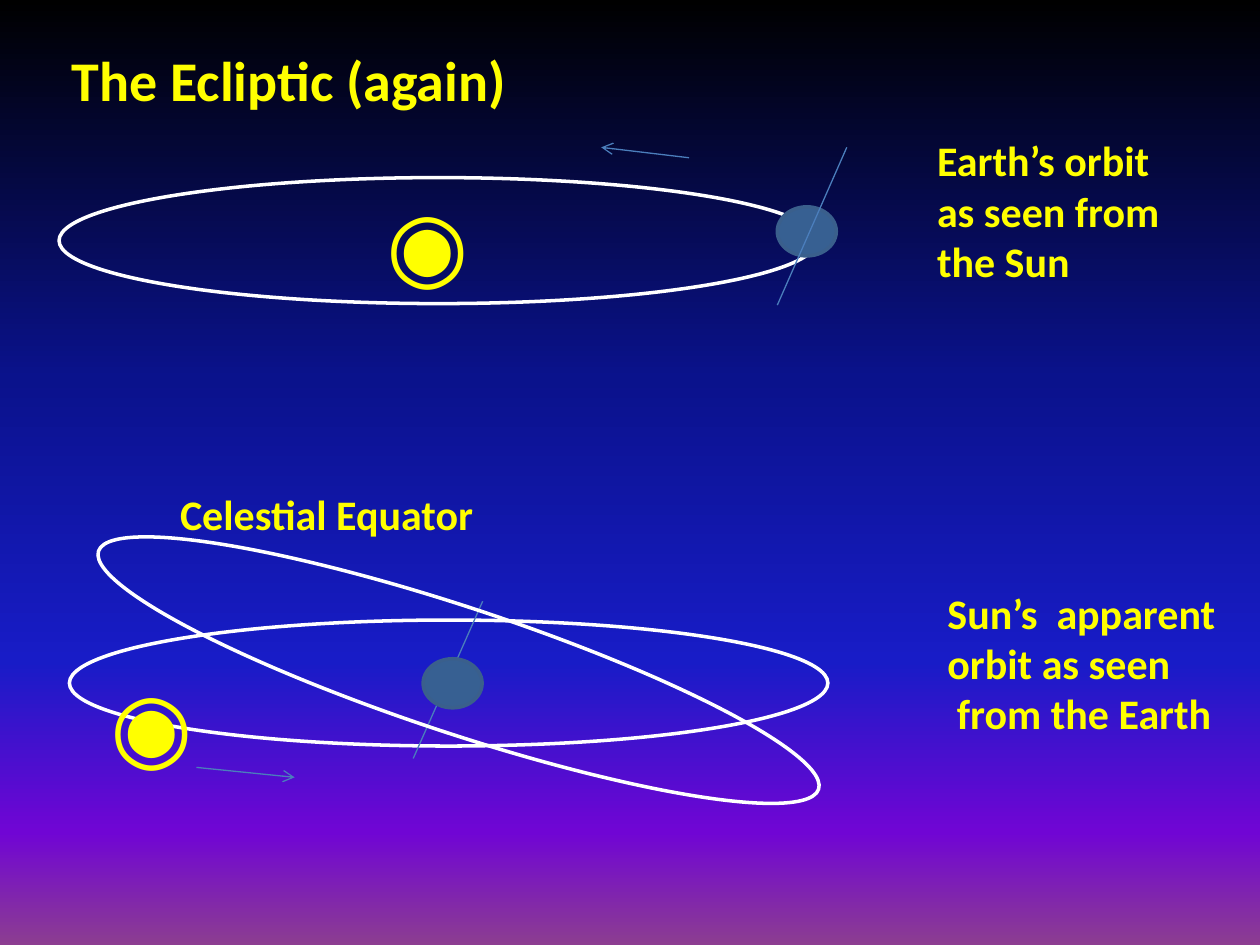
from lxml.etree import SubElement
from pptx import Presentation
from pptx.dml.color import RGBColor
from pptx.enum.shapes import MSO_CONNECTOR, MSO_SHAPE
from pptx.enum.text import MSO_AUTO_SIZE
from pptx.oxml import parse_xml
from pptx.oxml.ns import nsdecls, qn
from pptx.util import Cm, Pt

COLORS = {
    "text": "FFFF00",
    "orbit": "FFFFFF",
    "earth": "376092",
    "earth_edge": "3A5F8C",
    "axis": "4B7EBC",
}
SKY = [(0, "000000"), (40, "0A128C"), (70, "181CC7"), (88, "7005D4"), (100, "8C3D91")]

prs = Presentation()
prs.slide_width, prs.slide_height = Cm(25.4), Cm(19.05)
slide = prs.slides.add_slide(prs.slide_layouts[6])

# Night sky: vertical gradient behind everything
stops = "".join(
    f'<a:gs pos="{percent * 1000}"><a:srgbClr val="{color}"/></a:gs>'
    for percent, color in SKY
)
sky = parse_xml(
    f'<p:bg {nsdecls("p", "a")}><p:bgPr><a:gradFill rotWithShape="1">'
    f'<a:gsLst>{stops}</a:gsLst><a:lin ang="5400000" scaled="0"/></a:gradFill>'
    "<a:effectLst/></p:bgPr></p:bg>"
)
slide.element.cSld.insert(0, sky)


def add_ellipse(box, edge, fill=None, rotation=0):
    ellipse = slide.shapes.add_shape(MSO_SHAPE.OVAL, *map(Cm, box))
    ellipse.shadow.inherit = False
    ellipse.rotation = rotation
    if fill:
        ellipse.fill.solid()
        ellipse.fill.fore_color.rgb = RGBColor.from_string(COLORS[fill])
    else:
        ellipse.fill.background()
    ellipse.line.color.rgb = RGBColor.from_string(COLORS[edge])
    ellipse.line.width = Pt(2)


def add_line(ends, arrow=False):
    line = slide.shapes.add_connector(MSO_CONNECTOR.STRAIGHT, *map(Cm, ends))
    line.line.color.rgb = RGBColor.from_string(COLORS["axis"])
    line.line.width = Pt(0.75)
    if arrow:
        SubElement(line.line._get_or_add_ln(), qn("a:tailEnd"), type="arrow")
    SubElement(line._element.spPr, qn("a:effectLst"))


ORBIT_SIZE = (15.29, 2.54)
EARTH_SIZE = (1.19, 0.99)

# Orbit of the Earth, with its tilted axis and direction of travel
add_ellipse((1.19, 3.58, *ORBIT_SIZE), "orbit", rotation=180)
add_ellipse((15.67, 4.17, *EARTH_SIZE), "earth_edge", "earth")
add_line((17.07, 2.97, 15.67, 6.15))
add_line((13.89, 3.18, 12.12, 2.97), arrow=True)

# Apparent orbit of the Sun around the Earth
add_ellipse((1.4, 12.5, *ORBIT_SIZE), "orbit")
add_line((3.96, 15.47, 5.94, 15.67), arrow=True)
add_line((9.73, 12.12, 8.33, 15.29))
add_ellipse((8.53, 13.28, *EARTH_SIZE), "earth_edge", "earth")

# Celestial equator
add_ellipse((1.6, 12.24, *ORBIT_SIZE), "orbit", rotation=18.3)

# Suns, title and labels: box, lines, font size, bold, wrap
texts = [
    ((7.54, 3.58, 2.39, 2.57), ["◉"], 54, None, True),
    ((1.98, 13.28, 2.39, 2.57), ["◉"], 54, None, True),
    ((1.19, 0.79, 9.37, 1.63), ["The Ecliptic (again)"], 32, True, False),
    ((18.64, 2.59, 5.05, 3.33), ["Earth’s orbit", "as seen from", "the Sun"], 24, True, False),
    ((3.38, 9.73, 6.5, 1.27), ["Celestial Equator"], 24, True, False),
    ((18.85, 11.71, 5.97, 3.33),
     ["Sun’s  apparent", "orbit as seen", " from the Earth"], 24, True, False),
]
for box, lines, size, bold, wrap in texts:
    frame = slide.shapes.add_textbox(*map(Cm, box)).text_frame
    frame.word_wrap = wrap
    frame.auto_size = MSO_AUTO_SIZE.SHAPE_TO_FIT_TEXT
    frame.text = "\n".join(lines)
    font_format = {"name": "Calibri", "size": Pt(size), "bold": bold}
    for paragraph in frame.paragraphs:
        font = paragraph.runs[0].font
        for attribute, value in font_format.items():
            setattr(font, attribute, value)
        font.color.rgb = RGBColor.from_string(COLORS["text"])

prs.save("out.pptx")
